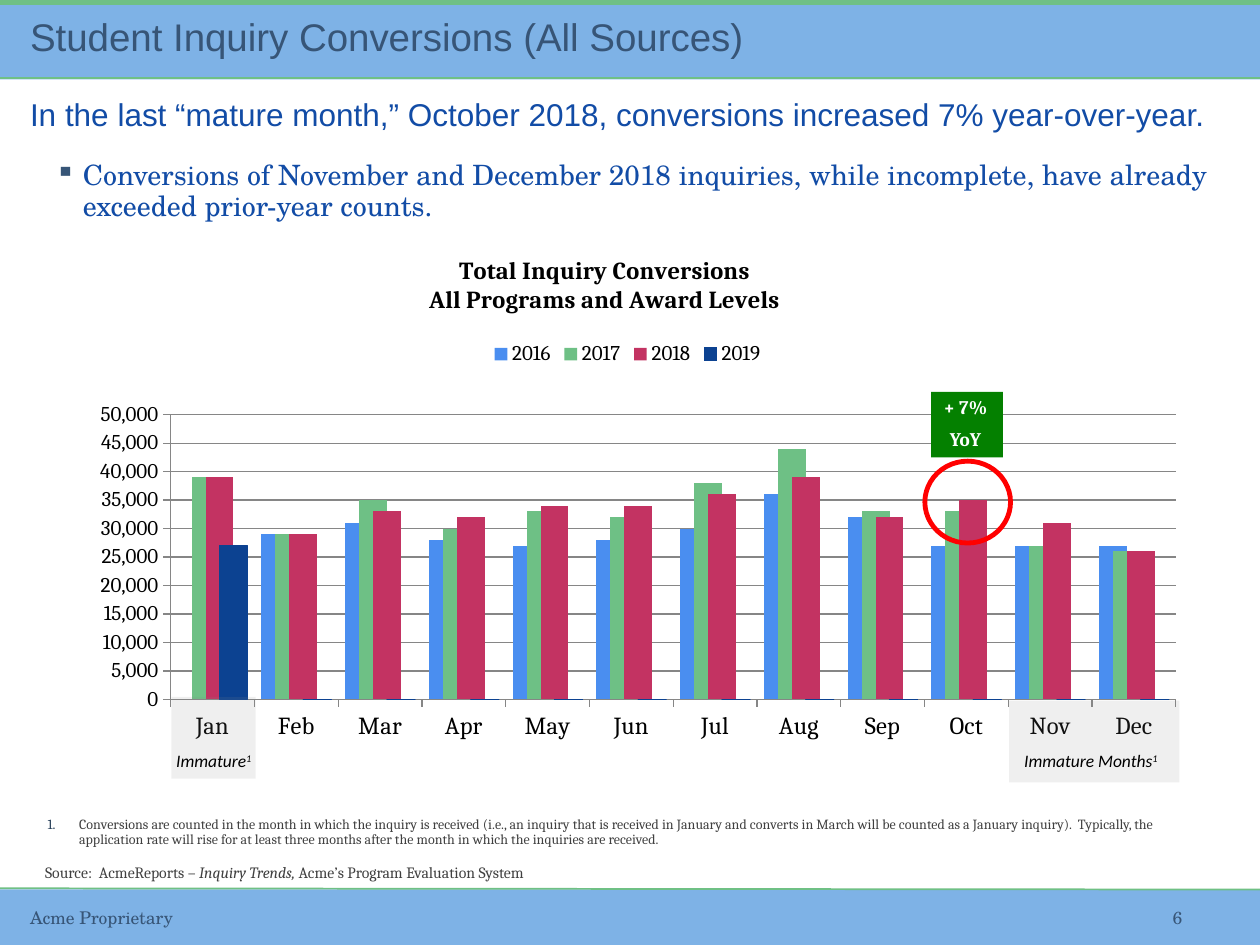
from dataclasses import dataclass, field
from typing import Any, Optional

from lxml.etree import SubElement
from pptx import Presentation
from pptx.chart.data import CategoryChartData
from pptx.dml.color import RGBColor
from pptx.enum.chart import XL_CHART_TYPE as ChartType, XL_LEGEND_POSITION as LegendPosition
from pptx.enum.chart import XL_TICK_MARK as TickMark
from pptx.enum.shapes import MSO_CONNECTOR as Connector, MSO_SHAPE as Preset
from pptx.enum.text import MSO_ANCHOR as Anchor, MSO_AUTO_SIZE as AutoSize, PP_ALIGN as Align
from pptx.oxml import parse_xml
from pptx.oxml.ns import nsdecls, qn
from pptx.util import Inches, Pt

COLUMNS, ROWS = 100, 75
WIDTH, HEIGHT = Inches(10), Inches(7.5)
COLORS = {
    "band": "7EB2E6", "green": "6FC085", "slate": "375577", "blue": "124CA6",
    "veil": "888888", "note": "404040", "number": "284059", "black": "000000",
    "white": "FFFFFF", "red": "FF0000", "callout": "048000", "grid": "868686",
}
SERIES = {
    "2016": ("4A8EF0", [None, 29, 31, 28, 27, 28, 30, 36, 32, 27, 27, 27]),
    "2017": ("6EC085", [39, 29, 35, 30, 33, 32, 38, 44, 33, 33, 27, 26]),
    "2018": ("C33362", [39, 29, 33, 32, 34, 34, 36, 39, 32, 35, 31, 26]),
    "2019": ("0C4291", [27] + [0] * 11),
}
MONTHS = "Jan Feb Mar Apr May Jun Jul Aug Sep Oct Nov Dec".split()


@dataclass
class Box:
    column: float
    row: float
    columns: float
    rows: float

    def lengths(self) -> tuple:
        return (across(self.column), down(self.row), across(self.columns), down(self.rows))


@dataclass
class Style:
    font: str
    size: float
    color: str
    bold: bool = False


@dataclass
class Line:
    runs: list
    layout: dict = field(default_factory=dict)
    bullet: Optional[tuple] = None


@dataclass
class Label:
    box: Box
    style: Style
    lines: list
    frame: dict = field(default_factory=dict)


def across(columns: float) -> int:
    return int(WIDTH * columns / COLUMNS)


def down(rows: float) -> int:
    return int(HEIGHT * rows / ROWS)


def rgb(name: str) -> RGBColor:
    return RGBColor.from_string(COLORS.get(name, name))


def apply(target: Any, values: dict) -> None:
    for name, value in values.items():
        setattr(target, name, value)


def style_font(font: Any, style: Style, **extra: Any) -> None:
    apply(font, {"name": style.font, "size": Pt(style.size), "bold": style.bold, **extra})
    font.color.rgb = rgb(style.color)


def add_bullet(paragraph: Any, bullet: tuple) -> None:
    tag, attributes, color, margin, hanging = bullet
    properties = paragraph._p.get_or_add_pPr()
    properties.set("marL", str(Inches(margin)))
    properties.set("indent", str(-Inches(hanging)))
    SubElement(SubElement(properties, qn("a:buClr")), qn("a:srgbClr"), val=COLORS[color])
    SubElement(properties, qn(tag), attributes)


def write(text_frame: Any, label: Label) -> None:
    apply(text_frame, {"word_wrap": True, "vertical_anchor": Anchor.TOP, **label.frame})
    for index, line in enumerate(label.lines):
        paragraph = text_frame.add_paragraph() if index else text_frame.paragraphs[0]
        if line.bullet:
            add_bullet(paragraph, line.bullet)
        apply(paragraph, {"alignment": Align.LEFT, **line.layout})
        for text, *marks in line.runs:
            run = paragraph.add_run()
            run.text = text
            style_font(run.font, label.style, italic="italic" in marks)
            if "raised" in marks:
                run._r.get_or_add_rPr().set("baseline", "30000")


def add_label(slide: Any, label: Label) -> None:
    write(slide.shapes.add_textbox(*label.box.lengths()).text_frame, label)


def add_block(slide: Any, box: Box, fill: Optional[str] = None, opacity: int = 100,
              outline: Optional[tuple] = None, preset: Any = Preset.RECTANGLE) -> Any:
    shape = slide.shapes.add_shape(preset, *box.lengths())
    shape.shadow.inherit = False
    if fill:
        shape.fill.solid()
        shape.fill.fore_color.rgb = rgb(fill)
        if opacity < 100:
            color = shape._element.spPr.find(qn("a:solidFill"))[0]
            SubElement(color, qn("a:alpha"), val=str(opacity * 1000))
    else:
        shape.fill.background()
    if outline:
        shape.line.color.rgb, shape.line.width = rgb(outline[0]), Pt(outline[1])
    else:
        shape.line.fill.background()
    return shape


def add_rule(slide: Any, start_row: float, end_row: float) -> None:
    rule = slide.shapes.add_connector(Connector.STRAIGHT, 0, down(start_row), WIDTH, down(end_row))
    rule.line.color.rgb, rule.line.width = rgb("green"), Pt(1)
    SubElement(rule._element.spPr, qn("a:effectLst"))


def place(parent: Any, index: int, values: dict) -> None:
    for existing in parent.findall(qn("c:layout")):
        parent.remove(existing)
    settings = "".join(f'<c:{name} val="{value}"/>' for name, value in values.items())
    parent.insert(index, parse_xml(
        f'<c:layout {nsdecls("c")}><c:manualLayout>{settings}</c:manualLayout></c:layout>'))


def add_conversion_chart(slide: Any, box: Box) -> None:
    data = CategoryChartData()
    data.categories = MONTHS
    for name, (_, thousands) in SERIES.items():
        data.add_series(name, [None if value is None else value * 1000 for value in thousands])
    chart = slide.shapes.add_chart(ChartType.COLUMN_CLUSTERED, *box.lengths(), data).chart
    small, large = Style("Cambria", 12, "black"), Style("Cambria", 14, "black")
    style_font(chart.font, Style("TeX Gyre Schola", 14, "black"))
    chart.has_title = chart.has_legend = True
    chart.chart_title.text_frame.text = "Total Inquiry Conversions\nAll Programs and Award Levels"
    for paragraph in chart.chart_title.text_frame.paragraphs:
        style_font(paragraph.runs[0].font, Style("Cambria", 14, "black", bold=True))
    apply(chart.legend, {"position": LegendPosition.TOP, "include_in_layout": False})
    style_font(chart.legend.font, small)
    apply(chart.value_axis, {"minimum_scale": 0, "maximum_scale": 50000, "major_unit": 5000,
                             "has_major_gridlines": True})
    apply(chart.value_axis.tick_labels, {"number_format": "#,##0", "number_format_is_linked": False})
    for axis, style in ((chart.category_axis, large), (chart.value_axis, small)):
        axis.major_tick_mark = TickMark.OUTSIDE
        style_font(axis.tick_labels.font, style)
        axis.format.line.color.rgb = rgb("grid")
    chart.value_axis.major_gridlines.format.line.color.rgb = rgb("grid")
    plot = chart.plots[0]
    apply(plot, {"gap_width": 50, "overlap": 50, "vary_by_categories": False})
    for series in plot.series:
        series.format.fill.solid()
        series.format.fill.fore_color.rgb = rgb(SERIES[series.name][0])
    series.format.line.color.rgb, series.format.line.width = rgb(SERIES["2019"][0]), Pt(0.75)
    edges = {"xMode": "edge", "yMode": "edge"}
    place(chart._chartSpace.chart.plotArea, 0,
          {"layoutTarget": "inner", **edges, "x": 0.116, "y": 0.298, "w": 0.845, "h": 0.484})
    place(chart.chart_title._element, 1, {**edges, "x": 0.33, "y": 0.02})


def main() -> None:
    presentation = Presentation()
    apply(presentation, {"slide_width": WIDTH, "slide_height": HEIGHT})
    slide = presentation.slides.add_slide(presentation.slide_layouts[6])
    footer = Style("TeX Gyre Schola", 10, "slate")
    immature = Style("Calibri", 10, "black")
    middle = {"vertical_anchor": Anchor.MIDDLE}
    loose = {"word_wrap": False, "auto_size": AutoSize.SHAPE_TO_FIT_TEXT}
    body = {"line_spacing": 0.94, "space_after": Pt(4)}
    tight = {"line_spacing": 0.9, "space_after": Pt(6)}

    for box, fill in ((Box(0, 70.6, 100, 4.4), "band"), (Box(0, 0.4, 100, 5.9), "band"),
                      (Box(0, 0, 100, 0.4), "green")):
        add_block(slide, box, fill)
    add_rule(slide, 6.2, 6.2)
    add_rule(slide, 70.5, 70.6)
    add_conversion_chart(slide, Box(2.6, 19, 94.4, 46.7))
    for box in (Box(80.1, 55.6, 13.5, 6.5), Box(13.6, 55.3, 6.7, 6.5)):
        add_block(slide, box, "veil", opacity=13)
    add_block(slide, Box(73.4, 36.6, 6.8, 6.5), outline=("red", 2.75), preset=Preset.OVAL)

    labels = [
        Label(Box(1.4, 0, 61.1, 6.2), Style("Arial", 22, "slate"),
              [Line([("Student Inquiry Conversions (All Sources)",)], {"line_spacing": 0.89})], middle),
        Label(Box(1.4, 7.3, 97.6, 4.4), Style("Arial", 18, "blue"),
              [Line([("In the last “mature month,” October 2018, conversions increased 7% "
                      "year-over-year.",)], body)]),
        Label(Box(1.4, 12.2, 97.6, 6.1), Style("TeX Gyre Schola", 16, "blue"),
              [Line([("Conversions of November and December 2018 inquiries, while incomplete, "
                      "have already exceeded prior-year counts.",)], body,
                    ("a:buChar", {"char": "▪"}, "slate", 0.42, 0.22))]),
        Label(Box(2.8, 64.4, 94.4, 3.6), Style("Cambria", 8, "note"),
              [Line([("Conversions are counted in the month in which the inquiry is received (i.e., "
                      "an inquiry that is received in January and converts in March will be counted "
                      "as a January inquiry).  Typically, the application rate will rise for at least "
                      "three months after the month in which the inquiries are received.",)], tight,
                    ("a:buAutoNum", {"type": "arabicPeriod"}, "number", 0.25, 0.25))]),
        Label(Box(2.6, 68, 43.8, 2.5), Style("Cambria", 9, "note"),
              [Line([("Source:  AcmeReports – ",), ("Inquiry Trends, ", "italic"),
                     ("Acme’s Program Evaluation System",)])], loose),
        Label(Box(1.4, 70.6, 23.7, 4.4), footer, [Line([("Acme Proprietary",)])], middle),
        Label(Box(86.9, 70.6, 13.1, 4.4), footer,
              [Line([("6",)], {"alignment": Align.CENTER})], middle),
    ]
    for box, text in ((Box(80.3, 59.2, 12.8, 2.5), "Immature Months"),
                      (Box(13, 59.2, 8.3, 2.5), "Immature")):
        labels.append(Label(box, immature, [Line([(text, "italic"), ("1", "italic", "raised")], tight)],
                            loose))
    for label in labels:
        add_label(slide, label)

    growth = Label(Box(73.9, 31.1, 5.7, 5.2), Style("Cambria", 11, "white", bold=True),
                   [Line([("+ 7%",)], tight), Line([("YoY",)], {**tight, "alignment": Align.CENTER})],
                   loose)
    write(add_block(slide, growth.box, "callout").text_frame, growth)
    presentation.save("out.pptx")


if __name__ == "__main__":
    main()
